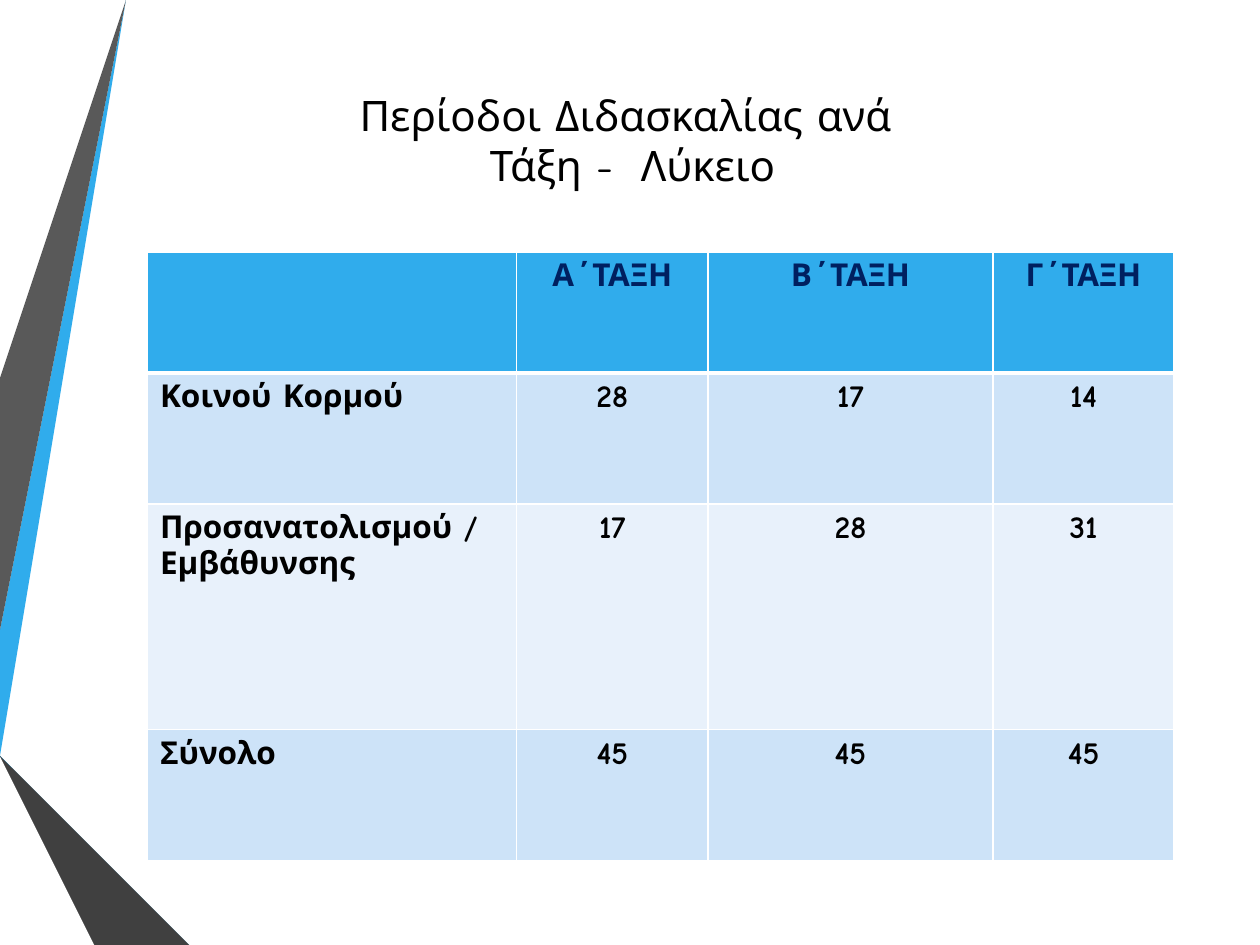
from lxml.etree import SubElement
from pptx import Presentation
from pptx.dml.color import RGBColor
from pptx.enum.text import MSO_ANCHOR, PP_ALIGN
from pptx.oxml.ns import qn
from pptx.util import Inches, Pt

FONT = "Comic Neue"
BLACK = RGBColor(0x00, 0x00, 0x00)
WHITE = RGBColor(0xFF, 0xFF, 0xFF)
NAVY = RGBColor(0x00, 0x20, 0x60)
SKY = RGBColor(0x30, 0xAC, 0xEC)
BLUE = RGBColor(0x12, 0x87, 0xC3)
DEEP_BLUE = RGBColor(0x0C, 0x5A, 0x82)
GRAY = RGBColor(0x59, 0x59, 0x59)
DARK_GRAY = RGBColor(0x40, 0x40, 0x40)
CHARCOAL = RGBColor(0x26, 0x26, 0x26)
BAND = RGBColor(0xCD, 0xE3, 0xF8)
LIGHT_BAND = RGBColor(0xE8, 0xF1, 0xFB)

RIBBONS = [
    (SKY, [(0, 5.44), (0, 5.75), (0.22, 5.79), (1.17, 0), (0.89, 0)]),
    (GRAY, [(0.83, 0), (0.55, 0), (0, 3.36), (0, 5.06)]),
    (CHARCOAL, [(0, 6.19), (0, 6.21), (0.93, 7.5), (0.99, 7.5)]),
    (DEEP_BLUE, [(0, 5.79), (0, 5.8), (1.56, 7.5), (1.63, 7.5)]),
    (BLUE, [(0, 5.79), (1.63, 7.5), (2.33, 7.5), (0.22, 5.79), (0, 5.75)]),
    (DARK_GRAY, [(0, 6.19), (0.99, 7.5), (1.51, 7.5), (0, 5.86)]),
]
COL_WIDTHS = [2.93, 1.52, 2.26, 1.44]
ROW_HEIGHTS = [0.96, 1.04, 1.79, 1.04]
PERIODS = [
    ["", "Α΄ΤΑΞΗ", "Β΄ΤΑΞΗ", "Γ΄ΤΑΞΗ"],
    ["Κοινού Κορμού", "28", "17", "14"],
    ["Προσανατολισμού / Εμβάθυνσης", "17", "28", "31"],
    ["Σύνολο", "45", "45", "45"],
]


def write_text(tf, text, size=18, color=BLACK, bold=False, align=PP_ALIGN.CENTER):
    """Fill a text frame with one formatted paragraph."""
    p = tf.paragraphs[0]
    p.text = text
    p.alignment = align
    for r in p.runs:
        r.font.name = FONT
        r.font.size = Pt(size)
        r.font.bold = bold
        r.font.color.rgb = color


def add_ribbon(s, color, points):
    """Draw a closed, filled outline through points in inches."""
    builder = s.shapes.build_freeform(*points[0], scale=Inches(1))
    builder.add_line_segments(points[1:], close=True)
    sp = builder.convert_to_shape()
    sp.fill.solid()
    sp.fill.fore_color.rgb = color
    sp.line.fill.background()
    sp.shadow.inherit = False


def set_borders(cell, bottom=1):
    """Give a cell white borders, placed before its fill."""
    tc_pr = cell._tc.get_or_add_tcPr()
    widths = {"a:lnL": 1, "a:lnR": 1, "a:lnT": 1, "a:lnB": bottom}
    for i, (tag, width) in enumerate(widths.items()):
        ln = SubElement(tc_pr, qn(tag), w=str(Pt(width)))
        fill = SubElement(ln, qn("a:solidFill"))
        SubElement(fill, qn("a:srgbClr"), val=str(WHITE))
        tc_pr.insert(i, ln)


def add_title(s):
    """Add the two-line slide title."""
    sp = s.shapes.add_textbox(Inches(1.17), Inches(0.25), Inches(7.7), Inches(1.31))
    tf = sp.text_frame
    tf.word_wrap = True
    tf.vertical_anchor = MSO_ANCHOR.BOTTOM
    write_text(tf, "Περίοδοι Διδασκαλίας ανά \vΤάξη -  Λύκειο", size=24)


def add_periods_table(s):
    """Add the table of teaching periods per class."""
    table = s.shapes.add_table(
        len(PERIODS), len(COL_WIDTHS), Inches(1.17), Inches(2),
        Inches(sum(COL_WIDTHS)), Inches(sum(ROW_HEIGHTS))).table
    for col, width in zip(table.columns, COL_WIDTHS):
        col.width = Inches(width)
    for row, height in zip(table.rows, ROW_HEIGHTS):
        row.height = Inches(height)
    for i, values in enumerate(PERIODS):
        header = i == 0
        fill = SKY if header else BAND if i % 2 else LIGHT_BAND
        for j, value in enumerate(values):
            cell = table.cell(i, j)
            cell.fill.solid()
            cell.fill.fore_color.rgb = fill
            set_borders(cell, bottom=3 if header else 1)
            write_text(cell.text_frame, value, bold=True,
                       color=NAVY if header else BLACK,
                       align=PP_ALIGN.CENTER if j else PP_ALIGN.LEFT)


def main():
    """Build the slide and save it."""
    prs = Presentation()
    prs.slide_width, prs.slide_height = Inches(10), Inches(7.5)
    s = prs.slides.add_slide(prs.slide_layouts[6])
    for color, points in RIBBONS:
        add_ribbon(s, color, points)
    add_periods_table(s)
    add_title(s)
    prs.save("out.pptx")


if __name__ == "__main__":
    main()
